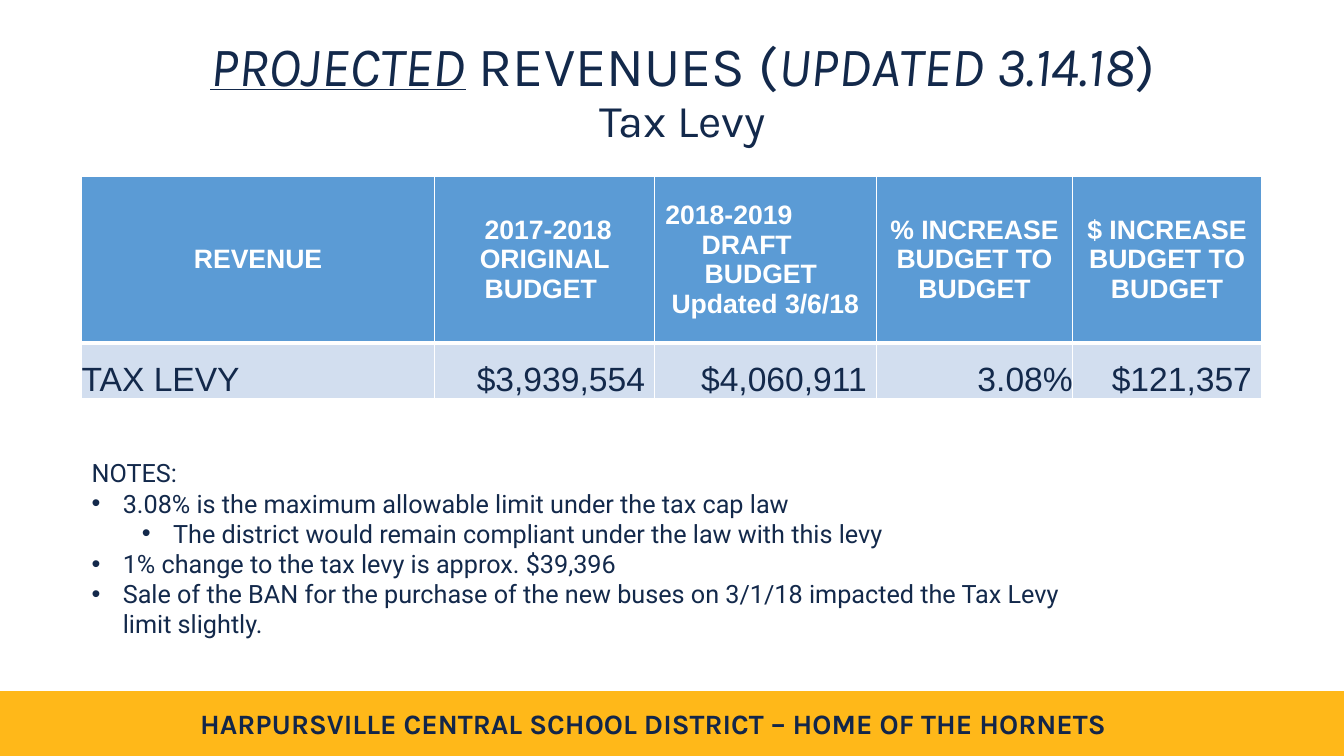
from dataclasses import dataclass

from lxml import etree
from pptx import Presentation
from pptx import util as u
from pptx.dml.color import RGBColor
from pptx.enum import shapes, text
from pptx.oxml import ns

NAVY, GOLD, WHITE, BLUE, PALE = "13294B", "FFB819", "FFFFFF", "5B9BD5", "D2DEEF"
LEFT, CENTER, RIGHT = text.PP_ALIGN.LEFT, text.PP_ALIGN.CENTER, text.PP_ALIGN.RIGHT


@dataclass
class Style:
    font: str
    size: float
    color: str = NAVY
    bold: bool = False


@dataclass
class Line:
    content: str
    align: text.PP_ALIGN = LEFT
    margin: float = 0
    bullet: bool = False
    level: int = 0


@dataclass
class Cell:
    lines: list[Line]


HEADER_STYLE = Style("Arial", 19, WHITE, True)
BODY_STYLE = Style("Arial", 24)
NOTE_STYLE = Style("Roboto", 18)
FOOTER_STYLE = Style("Karla", 20, "132649", True)
COLUMN_WIDTHS = [3.5, 2.18, 2.2, 1.95, 1.87]
ROW_HEIGHTS = [1.65, 0.55]
HEADERS = [
    Cell([Line("REVENUE", CENTER)]),
    Cell([Line(" 2017-2018 ORIGINAL BUDGET ", CENTER)]),
    Cell([
        Line("2018-2019", margin=0.11),
        Line("DRAFT", margin=0.47),
        Line("BUDGET", margin=0.5),
        Line("Updated 3/6/18", CENTER),
    ]),
    Cell([Line("% INCREASE BUDGET TO BUDGET", CENTER)]),
    Cell([Line("$ INCREASE BUDGET TO BUDGET", CENTER)]),
]
LEVY = [Cell([Line("TAX LEVY")])] + [
    Cell([Line(value, RIGHT)])
    for value in ("$3,939,554 ", "$4,060,911 ", "3.08%", "$121,357 ")
]
NOTES = [
    Line("NOTES:"),
    Line("3.08% is the maximum allowable limit under the tax cap law", margin=0.31, bullet=True),
    Line("The district would remain compliant under the law with this levy",
         margin=0.81, bullet=True, level=1),
    Line("1% change to the tax levy is approx. $39,396", margin=0.31, bullet=True),
    Line("Sale of the BAN for the purchase of the new buses on 3/1/18 impacted the "
         "Tax Levy limit slightly.", margin=0.31, bullet=True),
]


def rgb(value: str) -> RGBColor:
    return RGBColor.from_string(value)


def add_run(paragraph, content: str, style: Style, italic=False, underline=False) -> None:
    run = paragraph.add_run()
    run.text = content
    font = run.font
    font.name, font.size, font.bold = style.font, u.Pt(style.size), style.bold
    font.italic, font.underline = italic, underline
    font.color.rgb = rgb(style.color)


def write_lines(frame, lines: list[Line], style: Style) -> None:
    frame.word_wrap = True
    for index, line in enumerate(lines):
        paragraph = frame.add_paragraph() if index else frame.paragraphs[0]
        paragraph.alignment = line.align
        paragraph.level = line.level
        properties = paragraph._p.get_or_add_pPr()
        properties.set("marL", str(u.Inches(line.margin)))
        if line.bullet:
            properties.set("indent", str(u.Inches(-0.31)))
            etree.SubElement(properties, ns.qn("a:buFont"), typeface="Arial")
            etree.SubElement(properties, ns.qn("a:buChar"), char="•")
        add_run(paragraph, line.content, style)


def add_text_box(slide, left: float, top: float, width: float, height: float):
    return slide.shapes.add_textbox(
        u.Inches(left), u.Inches(top), u.Inches(width), u.Inches(height))


def set_borders(cell, bottom: float) -> None:
    properties = cell._tc.get_or_add_tcPr()
    for index, (side, width) in enumerate(
            [("lnL", 1), ("lnR", 1), ("lnT", 1), ("lnB", bottom)]):
        border = etree.Element(ns.qn(f"a:{side}"), w=str(u.Pt(width)))
        fill = etree.SubElement(border, ns.qn("a:solidFill"))
        etree.SubElement(fill, ns.qn("a:srgbClr"), val=WHITE)
        properties.insert(index, border)


def fill_row(table, row: int, cells: list[Cell], style: Style, fill: str,
             anchor: text.MSO_ANCHOR, bottom: float) -> None:
    table.rows[row].height = u.Inches(ROW_HEIGHTS[row])
    for column, content in enumerate(cells):
        cell = table.cell(row, column)
        cell.fill.solid()
        cell.fill.fore_color.rgb = rgb(fill)
        cell.margin_left = cell.margin_right = cell.margin_top = cell.margin_bottom = 0
        cell.vertical_anchor = anchor
        write_lines(cell.text_frame, content.lines, style)
        set_borders(cell, bottom)


def add_footer(slide) -> None:
    band = slide.shapes.add_shape(
        shapes.MSO_SHAPE.RECTANGLE, 0, u.Inches(6.86), u.Inches(13.33), u.Inches(0.63))
    band.shadow.inherit = False
    band.fill.solid()
    band.fill.fore_color.rgb = rgb(GOLD)
    band.line.color.rgb = rgb(GOLD)
    band.line.width = u.Pt(1)
    motto = add_text_box(slide, 1.76, 6.96, 9.44, 0.44)
    write_lines(
        motto.text_frame,
        [Line("HARPURSVILLE CENTRAL SCHOOL DISTRICT – HOME OF THE HORNETS", CENTER)],
        FOOTER_STYLE)


def add_title(slide) -> None:
    title = add_text_box(slide, 1.02, 0.4, 11.5, 1.04)
    title.fill.solid()
    title.fill.fore_color.rgb = rgb(WHITE)
    frame = title.text_frame
    frame.word_wrap = True
    frame.vertical_anchor = text.MSO_ANCHOR.MIDDLE
    paragraph = frame.paragraphs[0]
    paragraph.alignment = CENTER
    paragraph.line_spacing = 0.9
    heading = Style("Karla", 39.6)
    add_run(paragraph, "PROJECTED", heading, italic=True, underline=True)
    add_run(paragraph, " REVENUES (", heading)
    add_run(paragraph, "UPDATED 3.14.18", heading, italic=True)
    add_run(paragraph, ")", heading)
    paragraph.add_line_break()
    add_run(paragraph, "Tax Levy", Style("Karla", 32.4))


def add_levy_table(slide) -> None:
    table = slide.shapes.add_table(
        len(ROW_HEIGHTS), len(COLUMN_WIDTHS), u.Inches(0.81), u.Inches(1.75),
        u.Inches(sum(COLUMN_WIDTHS)), u.Inches(sum(ROW_HEIGHTS))).table
    for column, width in zip(table.columns, COLUMN_WIDTHS):
        column.width = u.Inches(width)
    fill_row(table, 0, HEADERS, HEADER_STYLE, BLUE, text.MSO_ANCHOR.MIDDLE, 3)
    fill_row(table, 1, LEVY, BODY_STYLE, PALE, text.MSO_ANCHOR.BOTTOM, 1)
    for cell in table.rows[1].cells:
        top = cell._tc.tcPr.find(ns.qn("a:lnT"))
        top.set("w", str(u.Pt(3)))


def main() -> None:
    presentation = Presentation()
    presentation.slide_width, presentation.slide_height = u.Inches(13.33), u.Inches(7.5)
    slide = presentation.slides.add_slide(presentation.slide_layouts[6])
    add_footer(slide)
    add_title(slide)
    add_levy_table(slide)
    notes = add_text_box(slide, 0.81, 4.49, 9.88, 1.92)
    write_lines(notes.text_frame, NOTES, NOTE_STYLE)
    presentation.save("out.pptx")


if __name__ == "__main__":
    main()
